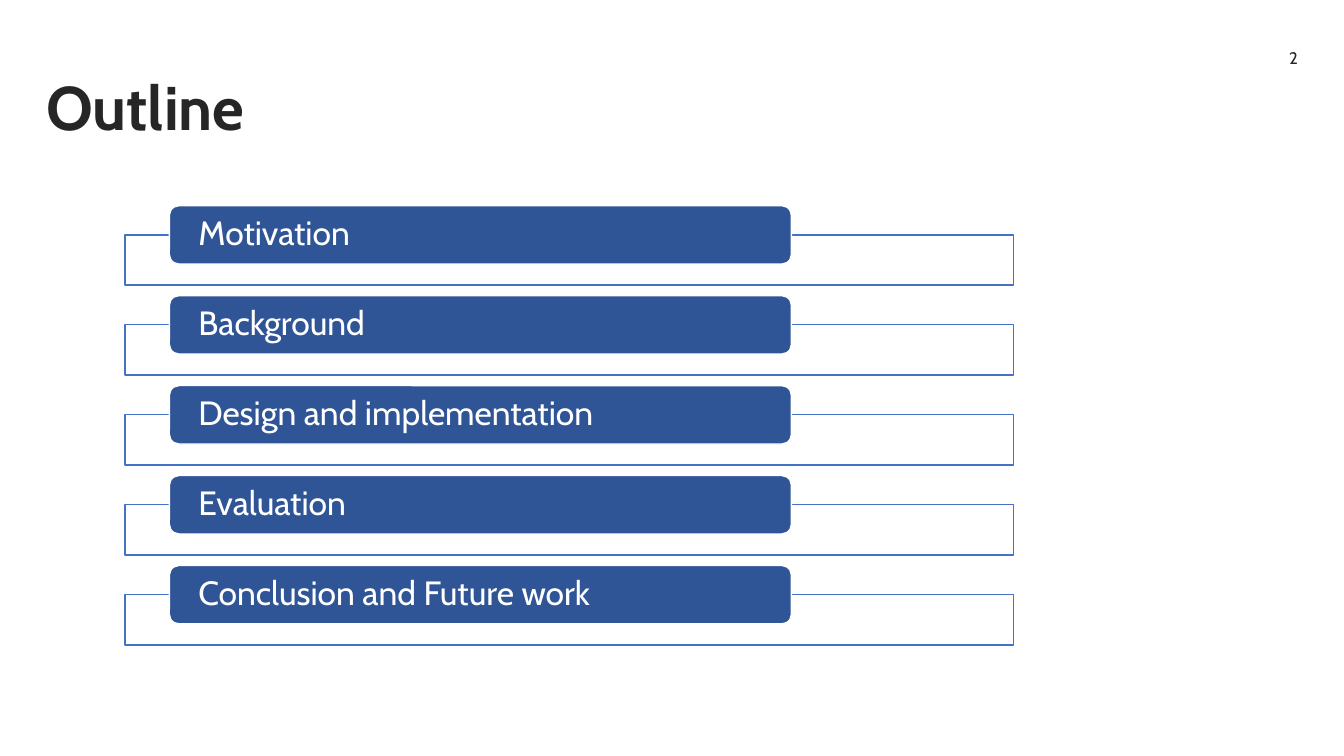
from dataclasses import dataclass

from lxml.etree import SubElement
from pptx import Presentation
from pptx.dml.color import RGBColor
from pptx.enum.shapes import MSO_SHAPE
from pptx.enum.text import MSO_ANCHOR, PP_ALIGN
from pptx.oxml.ns import qn
from pptx.shapes.autoshape import Shape
from pptx.slide import Slide
from pptx.util import Inches, Pt


@dataclass(frozen=True)
class Theme:
    font: str = "Cabin"
    ink: str = "262626"
    white: str = "FFFFFF"
    bar: str = "2F5597"
    frame: str = "4472C4"
    title_size: int = 44
    topic_size: int = 24
    number_size: int = 12


@dataclass(frozen=True)
class Box:
    left: float
    top: float
    width: float
    height: float

    def moved_down(self, distance: float) -> "Box":
        return Box(self.left, self.top + distance, self.width, self.height)

    def lengths(self) -> list[Inches]:
        return [Inches(v) for v in (self.left, self.top, self.width, self.height)]


@dataclass(frozen=True)
class Label:
    text: str
    size: int
    color: str
    bold: bool = False
    align: PP_ALIGN = PP_ALIGN.LEFT
    line_spacing: float = 1.0
    space_after: float = 0
    side_inset: float = 0.1
    edge_inset: float = 0.05


THEME = Theme()
TITLE_BOX = Box(0.36, 0.37, 11, 1.45)
NUMBER_BOX = Box(11.58, 0.37, 1.39, 0.4)
FRAME_BOX = Box(1.24, 2.33, 8.81, 0.5)
BAR_BOX = Box(1.68, 2.04, 6.17, 0.58)
FIRST_TO_LAST = 3.57
TOPICS = [
    "Motivation",
    "Background",
    "Design and implementation",
    "Evaluation",
    "Conclusion and Future work",
]


def write(sp: Shape, label: Label) -> None:
    tf = sp.text_frame
    tf.word_wrap = True
    tf.vertical_anchor = MSO_ANCHOR.MIDDLE
    tf.margin_left = tf.margin_right = Inches(label.side_inset)
    tf.margin_top = tf.margin_bottom = Inches(label.edge_inset)
    p = tf.paragraphs[0]
    p.alignment = label.align
    p.line_spacing = label.line_spacing
    p.space_after = Pt(label.space_after)
    r = p.add_run()
    r.text = label.text
    r.font.name = THEME.font
    r.font.size = Pt(label.size)
    r.font.bold = label.bold
    r.font.color.rgb = RGBColor.from_string(label.color)


def add_text(s: Slide, box: Box, label: Label) -> None:
    write(s.shapes.add_textbox(*box.lengths()), label)


def add_panel(s: Slide, kind: MSO_SHAPE, box: Box, fill: str, line: str) -> Shape:
    sp = s.shapes.add_shape(kind, *box.lengths())
    sp.shadow.inherit = False
    sp.fill.solid()
    sp.fill.fore_color.rgb = RGBColor.from_string(fill)
    sp.line.color.rgb = RGBColor.from_string(line)
    sp.line.width = Pt(1)
    return sp


def set_opacity(sp: Shape, percent: int) -> None:
    color = sp.fill._xPr.find(qn("a:solidFill"))[0]
    SubElement(color, qn("a:alpha")).set("val", str(percent * 1000))


def add_topic(s: Slide, text: str, offset: float) -> None:
    """Draw an outlined frame with the topic's bar lying over its top edge."""
    frame = add_panel(s, MSO_SHAPE.RECTANGLE, FRAME_BOX.moved_down(offset),
                      THEME.white, THEME.frame)
    set_opacity(frame, 90)
    bar = add_panel(s, MSO_SHAPE.ROUNDED_RECTANGLE, BAR_BOX.moved_down(offset),
                    THEME.bar, THEME.white)
    write(bar, Label(text, THEME.topic_size, THEME.white, line_spacing=0.9,
                     space_after=8.4, side_inset=0.26, edge_inset=0))


def main() -> None:
    prs = Presentation()
    prs.slide_width, prs.slide_height = Inches(13.33), Inches(7.5)
    s = prs.slides.add_slide(prs.slide_layouts[6])
    add_text(s, NUMBER_BOX, Label("2", THEME.number_size, THEME.ink,
                                  align=PP_ALIGN.RIGHT))
    pitch = FIRST_TO_LAST / (len(TOPICS) - 1)
    for i, topic in enumerate(TOPICS):
        add_topic(s, topic, i * pitch)
    add_text(s, TITLE_BOX, Label("Outline", THEME.title_size, THEME.ink,
                                 bold=True, line_spacing=0.9))
    prs.save("out.pptx")


if __name__ == "__main__":
    main()
